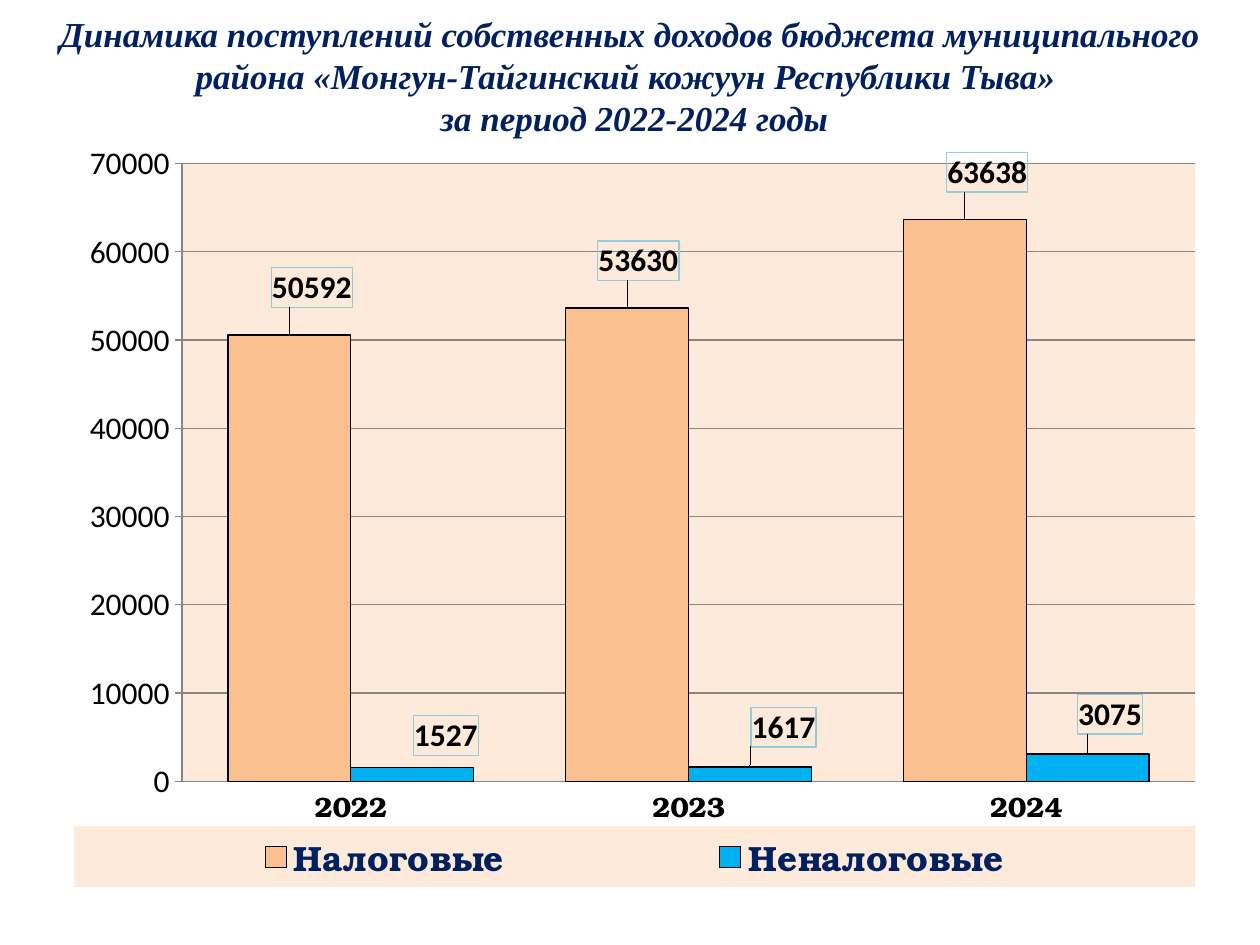
from dataclasses import dataclass

from lxml import etree
from pptx import Presentation
from pptx.chart.data import CategoryChartData
from pptx.dml.color import RGBColor
from pptx.enum.chart import XL_CHART_TYPE, XL_LABEL_POSITION, XL_LEGEND_POSITION, XL_TICK_MARK
from pptx.enum.text import MSO_ANCHOR, PP_ALIGN
from pptx.oxml import parse_xml
from pptx.oxml.ns import nsdecls, qn
from pptx.util import Inches, Pt

COLUMNS = XL_CHART_TYPE.COLUMN_CLUSTERED
OUTSIDE_END = XL_LABEL_POSITION.OUTSIDE_END
BOTTOM = XL_LEGEND_POSITION.BOTTOM
NO_TICK, TICK_OUT = XL_TICK_MARK.NONE, XL_TICK_MARK.OUTSIDE
CENTER = PP_ALIGN.CENTER
TOP = MSO_ANCHOR.TOP

COLORS = {
    "navy": "002060",
    "black": "000000",
    "peach": "FDEADA",
    "grid": "868686",
    "label_border": "93CDDD",
}
SERIF, SANS, SLAB = "Times New Roman", "Calibri", "TeX Gyre Bonum"
YEARS = ("2022", "2023", "2024")
TITLE_LINES = (
    "Динамика поступлений собственных доходов бюджета муниципального "
    "района «Монгун-Тайгинский кожуун Республики Тыва» ",
    " за период 2022-2024 годы",
)


@dataclass(frozen=True)
class Revenue:
    name: str
    values: tuple[int, ...]
    color: str
    label_shifts: tuple[tuple[float, float], ...]


REVENUES = (
    Revenue("Налоговые ", (50592, 53630, 63638), "FAC090",
            ((0.02, -0.03), (0.01, -0.03), (0.02, -0.03))),
    Revenue("Неналоговые", (1527, 1617, 3075), "00B0F0",
            ((0.03, -0.01), (0.03, -0.02), (0.02, -0.02))),
)


def rgb(name: str) -> RGBColor:
    return RGBColor.from_string(COLORS.get(name, name))


def set_font(font, family: str, size: int, color: str, bold: bool = False) -> None:
    font.name = family
    font.size = Pt(size)
    font.bold = bold
    font.color.rgb = rgb(color)


def set_line(line, color: str) -> None:
    line.color.rgb = rgb(color)
    line.width = Pt(0.75)


def manual_layout(x: float, y: float, size: tuple[float, float] | None = None,
                  inner: bool = False) -> etree.ElementBase:
    parts = [("layoutTarget", "inner")] if inner else []
    if size:
        parts += [("xMode", "edge"), ("yMode", "edge")]
    parts += [("x", x), ("y", y)]
    if size:
        parts += [("w", size[0]), ("h", size[1])]
    body = "".join(f'<c:{tag} val="{value}"/>' for tag, value in parts)
    return parse_xml(f'<c:layout {nsdecls("c")}><c:manualLayout>{body}</c:manualLayout></c:layout>')


def fill_properties(color: str) -> etree.ElementBase:
    return parse_xml(f'<c:spPr {nsdecls("c", "a")}><a:solidFill>'
                     f'<a:srgbClr val="{COLORS[color]}"/></a:solidFill></c:spPr>')


def border_properties(color: str) -> etree.ElementBase:
    return parse_xml(f'<c:spPr {nsdecls("c", "a")}><a:noFill/><a:ln w="9525"><a:solidFill>'
                     f'<a:srgbClr val="{COLORS[color]}"/></a:solidFill></a:ln></c:spPr>')


def add_title(page) -> None:
    box = page.shapes.title
    box.left, box.top, box.width, box.height = (Inches(n) for n in (0, 0.05, 10, 1.14))
    frame = box.text_frame
    frame.word_wrap = True
    frame.vertical_anchor = TOP
    for index, line in enumerate(TITLE_LINES):
        para = frame.add_paragraph() if index else frame.paragraphs[0]
        para.alignment = CENTER
        span = para.add_run()
        span.text = line
        set_font(span.font, SERIF, 20, "navy", True)
        span.font.italic = True


def style_series(series, revenue: Revenue) -> None:
    series.format.fill.solid()
    series.format.fill.fore_color.rgb = rgb(revenue.color)
    set_line(series.format.line, "black")
    series.invert_if_negative = False
    for index, (x, y) in enumerate(revenue.label_shifts):
        label = series.points[index].data_label
        set_font(label.font, SANS, 18, "black", True)
        label.position = OUTSIDE_END
    labels = series.data_labels
    set_font(labels.font, SANS, 18, "black", True)
    labels.show_value = True
    for element, shift in zip(labels._element.findall(qn("c:dLbl")), revenue.label_shifts):
        for old in element.findall(qn("c:spPr")):
            element.remove(old)
        element.find(qn("c:idx")).addnext(manual_layout(*shift))
        element.find(qn("c:txPr")).addprevious(border_properties("label_border"))


def style_axes(chart) -> None:
    years, amounts = chart.category_axis, chart.value_axis
    years.major_tick_mark = NO_TICK
    amounts.major_tick_mark = TICK_OUT
    amounts.minimum_scale, amounts.maximum_scale, amounts.major_unit = 0, 70000, 10000
    amounts.has_major_gridlines = True
    for line in (years.format.line, amounts.format.line, amounts.major_gridlines.format.line):
        set_line(line, "grid")
    set_font(years.tick_labels.font, SLAB, 16, "black", True)
    set_font(amounts.tick_labels.font, SANS, 18, "black")


def style_legend(chart) -> None:
    chart.has_legend = True
    legend = chart.legend
    legend.position = BOTTOM
    legend.include_in_layout = False
    set_font(legend.font, SLAB, 20, "navy", True)
    element = legend._element
    for old in element.findall(qn("c:layout")):
        element.remove(old)
    element.find(qn("c:legendPos")).addnext(manual_layout(0, 0.91, (1, 0.08)))
    element.find(qn("c:txPr")).addprevious(fill_properties("peach"))


def style_plot_area(chart) -> None:
    area = chart._chartSpace.find(".//" + qn("c:plotArea"))
    for old in area.findall(qn("c:layout")):
        area.remove(old)
    area.insert(0, manual_layout(0.096, 0.038, (0.904, 0.813), inner=True))
    area.append(fill_properties("peach"))


def add_revenue_chart(page) -> None:
    data = CategoryChartData()
    data.categories = YEARS
    for revenue in REVENUES:
        data.add_series(revenue.name, revenue.values)
    frame = page.shapes.add_chart(COLUMNS, Inches(0.59), Inches(1.07),
                                  Inches(8.9), Inches(6.03), data)
    chart = frame.chart
    chart.has_title = False
    set_font(chart.font, SANS, 18, "black")
    plot = chart.plots[0]
    plot.gap_width = 75
    plot.overlap = 0
    plot.vary_by_categories = False
    for series, revenue in zip(plot.series, REVENUES):
        style_series(series, revenue)
    style_axes(chart)
    style_legend(chart)
    style_plot_area(chart)


def main() -> None:
    deck = Presentation()
    deck.slide_width, deck.slide_height = Inches(10), Inches(7.5)
    page = deck.slides.add_slide(deck.slide_layouts[5])
    add_title(page)
    add_revenue_chart(page)
    deck.save("out.pptx")


if __name__ == "__main__":
    main()
